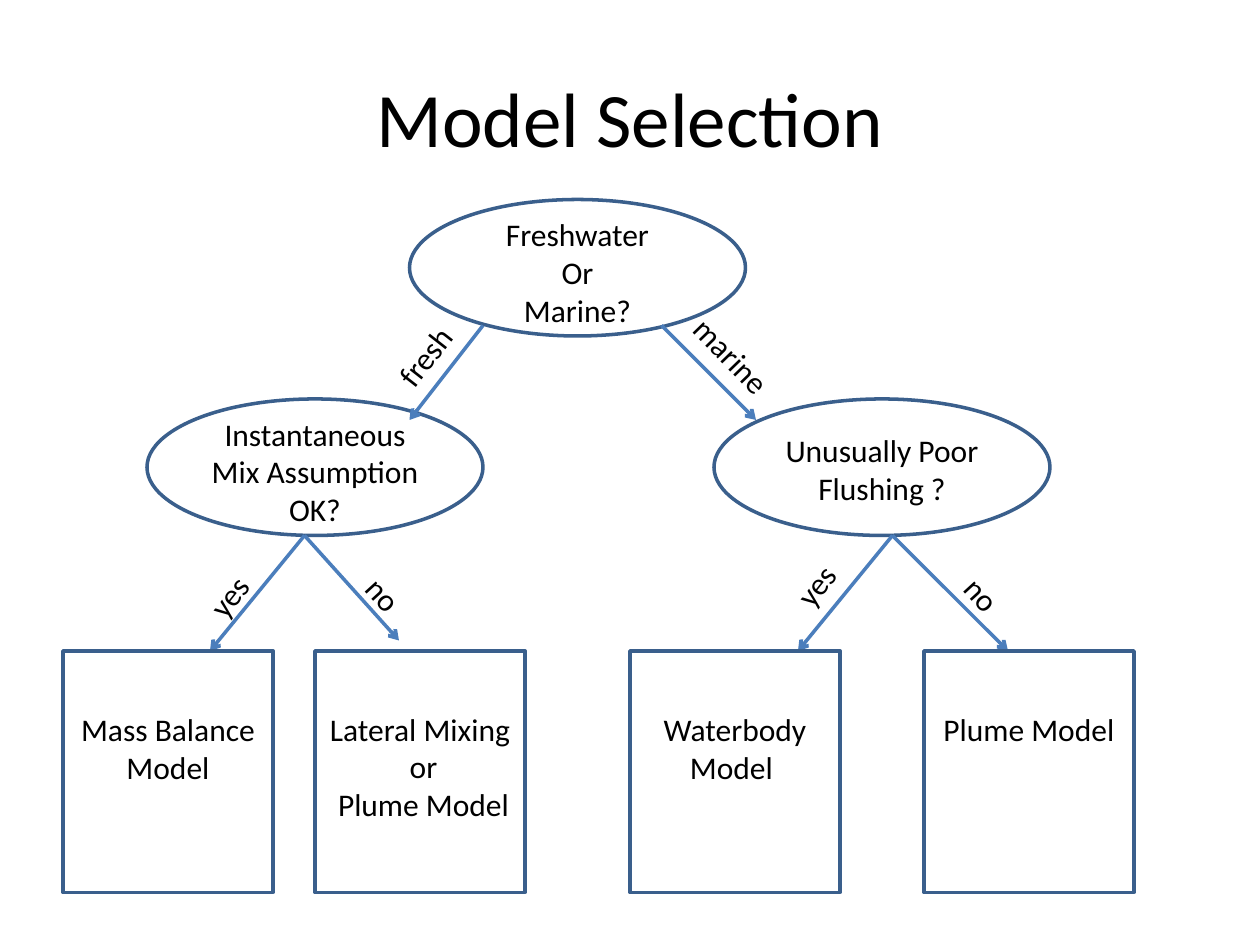
from lxml import etree
from pptx import Presentation
from pptx.dml.color import RGBColor
from pptx.enum.shapes import MSO_CONNECTOR, MSO_SHAPE
from pptx.enum.text import MSO_ANCHOR, PP_ALIGN
from pptx.oxml.ns import qn
from pptx.util import Inches, Pt

OVAL, BOX = MSO_SHAPE.OVAL, MSO_SHAPE.RECTANGLE
STRAIGHT = MSO_CONNECTOR.STRAIGHT
LEFT, CENTER = PP_ALIGN.LEFT, PP_ALIGN.CENTER
TOP, MIDDLE = MSO_ANCHOR.TOP, MSO_ANCHOR.MIDDLE

SLIDE_WIDTH, SLIDE_HEIGHT = 10, 7.5
COLUMNS, ROWS = 120, 90
FONT = "Calibri"
INK, OUTLINE, ARROW = "000000", "3A5F8C", "4B7EBC"

QUESTION_SIZE = (32, 13)
MODEL_SIZE = (20, 23)
MODEL_TOP = 62
TEXT_WIDTH = 24
LINE_ROWS, PADDING_ROWS = 3.65, 1.2

QUESTIONS = [
    (39, 19, 0.9, 3, ["Freshwater", "Or", "Marine?"]),
    (14, 38, 0.9, 3, ["Instantaneous Mix Assumption OK?"]),
    (68, 38, 2.5, 2, ["Unusually Poor Flushing ?"]),
]
MODELS = [
    (6, 2, ["Mass Balance Model"]),
    (30, 3, ["Lateral Mixing", " or", " Plume Model"]),
    (60, 2, ["Waterbody Model "]),
    (88, 1, ["Plume Model"]),
]
BRANCHES = [
    ((46, 31), (39, 40)),
    ((63, 31), (72, 40)),
    ((85, 51), (96, 62)),
    ((85, 51), (76, 62)),
    ((29, 51), (20, 62)),
    ((29, 51), (38, 61)),
]
ANSWERS = [
    ("fresh", 34, 27, 308.1),
    ("marine", 62.8, 34.7, 45.9),
    ("yes", 16, 49, 308.1),
    ("yes", 71.9, 48, 308.1),
    ("no", 31.4, 59.5, 47.6),
    ("no", 88.4, 59.5, 47.6),
]


def across(columns):
    return Inches(SLIDE_WIDTH * columns / COLUMNS)


def down(rows):
    return Inches(SLIDE_HEIGHT * rows / ROWS)


def color(hex_code):
    return RGBColor.from_string(hex_code)


def text_rows(line_count):
    return LINE_ROWS * line_count + PADDING_ROWS


def add_text(slide, lines, left, top, width, height,
             size=18, align=CENTER, anchor=TOP, rotation=0):
    label = slide.shapes.add_textbox(
        across(left), down(top), across(width), down(height))
    label.rotation = rotation
    frame = label.text_frame
    frame.word_wrap = True
    frame.vertical_anchor = anchor
    frame.text = "\n".join(lines)
    for paragraph in frame.paragraphs:
        paragraph.alignment = align
        paragraph.font.name = FONT
        paragraph.font.size = Pt(size)
        paragraph.font.color.rgb = color(INK)


def add_outline(slide, kind, left, top, size):
    width, height = size
    node = slide.shapes.add_shape(
        kind, across(left), down(top), across(width), down(height))
    node.shadow.inherit = False
    node.fill.background()
    node.line.color.rgb = color(OUTLINE)
    node.line.width = Pt(2)


def add_question(slide, left, top, text_drop, line_count, lines):
    add_outline(slide, OVAL, left, top, QUESTION_SIZE)
    inset = (QUESTION_SIZE[0] - TEXT_WIDTH) / 2
    add_text(slide, lines, left + inset, top + text_drop,
             TEXT_WIDTH, text_rows(line_count))


def add_model(slide, left, line_count, lines):
    add_outline(slide, BOX, left, MODEL_TOP, MODEL_SIZE)
    inset = (MODEL_SIZE[0] - TEXT_WIDTH) / 2
    add_text(slide, lines, left + inset, MODEL_TOP + 5,
             TEXT_WIDTH, text_rows(line_count))


def add_branch(slide, start, end):
    branch = slide.shapes.add_connector(
        STRAIGHT, across(start[0]), down(start[1]), across(end[0]), down(end[1]))
    branch.line.color.rgb = color(ARROW)
    branch.line.width = Pt(2)
    etree.SubElement(branch.line._get_or_add_ln(), qn("a:tailEnd"), type="arrow")
    etree.SubElement(branch._element.spPr, qn("a:effectLst"))


def main():
    deck = Presentation()
    deck.slide_width, deck.slide_height = Inches(SLIDE_WIDTH), Inches(SLIDE_HEIGHT)
    slide = deck.slides.add_slide(deck.slide_layouts[6])

    for question in QUESTIONS:
        add_question(slide, *question)
    for start, end in BRANCHES:
        add_branch(slide, start, end)
    for answer, left, top, rotation in ANSWERS:
        add_text(slide, [answer], left, top, 20, text_rows(1),
                 align=LEFT, rotation=rotation)
    for model in MODELS:
        add_model(slide, *model)
    add_text(slide, ["Model Selection"], 6, 3.6, 108, 15, size=44, anchor=MIDDLE)

    deck.save("out.pptx")


if __name__ == "__main__":
    main()
